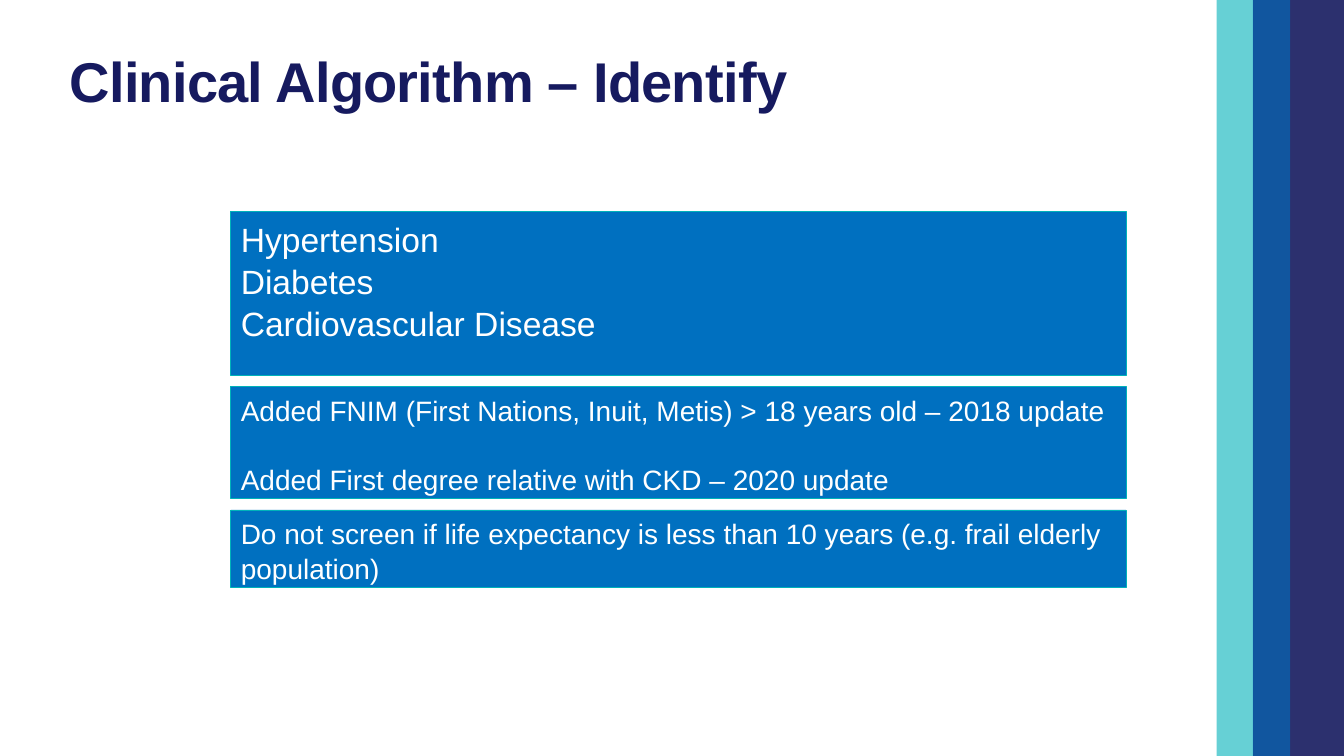
from lxml import etree
from pptx import Presentation
from pptx.dml.color import RGBColor
from pptx.enum import shapes, text
from pptx.util import Pt

COLORS = {"navy": "161A5F", "teal": "00B2B9", "blue": "0070C0", "white": "FFFFFF"}
NS = "{http://schemas.openxmlformats.org/drawingml/2006/main}"


def rgb(name):
    return RGBColor.from_string(COLORS[name])


def write(par, words, size=20, color="white", bold=False, lead=1.05, before=0, track=0):
    run = par.add_run()
    run.text = words
    font = run.font
    font.name, font.size, font.bold = "Arial", Pt(size), bold
    font.color.rgb = rgb(color)
    if track:
        run._r.get_or_add_rPr().set("spc", str(round(track * 100)))
    par.alignment = text.PP_ALIGN.LEFT
    par.line_spacing = lead
    par.space_before = Pt(before)


class Deck:
    def __init__(self, wide, high):
        self.show = Presentation()
        self.show.slide_width, self.show.slide_height = Pt(wide), Pt(high)
        self.slide = self.show.slides.add_slide(self.show.slide_layouts[5])
        self.font = "Arial"

    def rect(self, left, top, wide, high, fill):
        shape = self.slide.shapes.add_shape(
            shapes.MSO_SHAPE.RECTANGLE, Pt(left), Pt(top), Pt(wide), Pt(high))
        shape.shadow.inherit = False
        shape.fill.solid()
        shape.fill.fore_color.rgb = rgb(fill)
        return shape

    def stripe(self, left, wide, fill, alpha):
        shape = self.rect(left, 0, wide, 540, fill)
        shape.line.fill.background()
        tint = shape._element.spPr.find(f"{NS}solidFill/{NS}srgbClr")
        etree.SubElement(tint, NS + "alpha").set("val", str(alpha * 1000))

    def title(self, words):
        shape = self.slide.shapes.title
        shape.left, shape.top, shape.width, shape.height = map(Pt, (49.7, 38.9, 805.7, 56.2))
        frame = shape.text_frame
        frame.margin_left = frame.margin_right = frame.margin_top = frame.margin_bottom = 0
        frame.vertical_anchor = text.MSO_ANCHOR.TOP
        frame.word_wrap = True
        write(frame.paragraphs[0], words, size=40, color="navy", bold=True, lead=0.9, track=-0.5)

    def panel(self, top, high, lines, size, gap=0):
        shape = self.rect(164.9, top, 639.4, high, "blue")
        shape.line.color.rgb = rgb("teal")
        shape.line.width = Pt(0.5)
        frame = shape.text_frame
        frame.word_wrap = True
        frame.vertical_anchor = text.MSO_ANCHOR.TOP
        for i, line in enumerate(lines):
            par = frame.add_paragraph() if i else frame.paragraphs[0]
            write(par, line, size=size, before=gap if i else 0)


def main():
    deck = Deck(960, 540)
    for left, wide, fill, alpha in (
            (869, 26.4, "teal", 60), (895, 65, "navy", 90), (895, 26.6, "blue", 60)):
        deck.stripe(left, wide, fill, alpha)
    deck.title("Clinical Algorithm – Identify")

    panels = (
        (116.6, 24, 0, ["Hypertension", "Diabetes", "Cardiovascular Disease"]),
        (79.9, 20, 24.2, [
            "Added FNIM (First Nations, Inuit, Metis) > 18 years old – 2018 update",
            "Added First degree relative with CKD – 2020 update"]),
        (55.4, 20, 0, [
            "Do not screen if life expectancy is less than 10 years (e.g. frail elderly",
            "population)"]),
    )
    top = 151.2
    for high, size, gap, lines in panels:
        deck.panel(top, high, lines, size, gap)
        top += high + 8.3
    deck.show.save("out.pptx")


if __name__ == "__main__":
    main()
